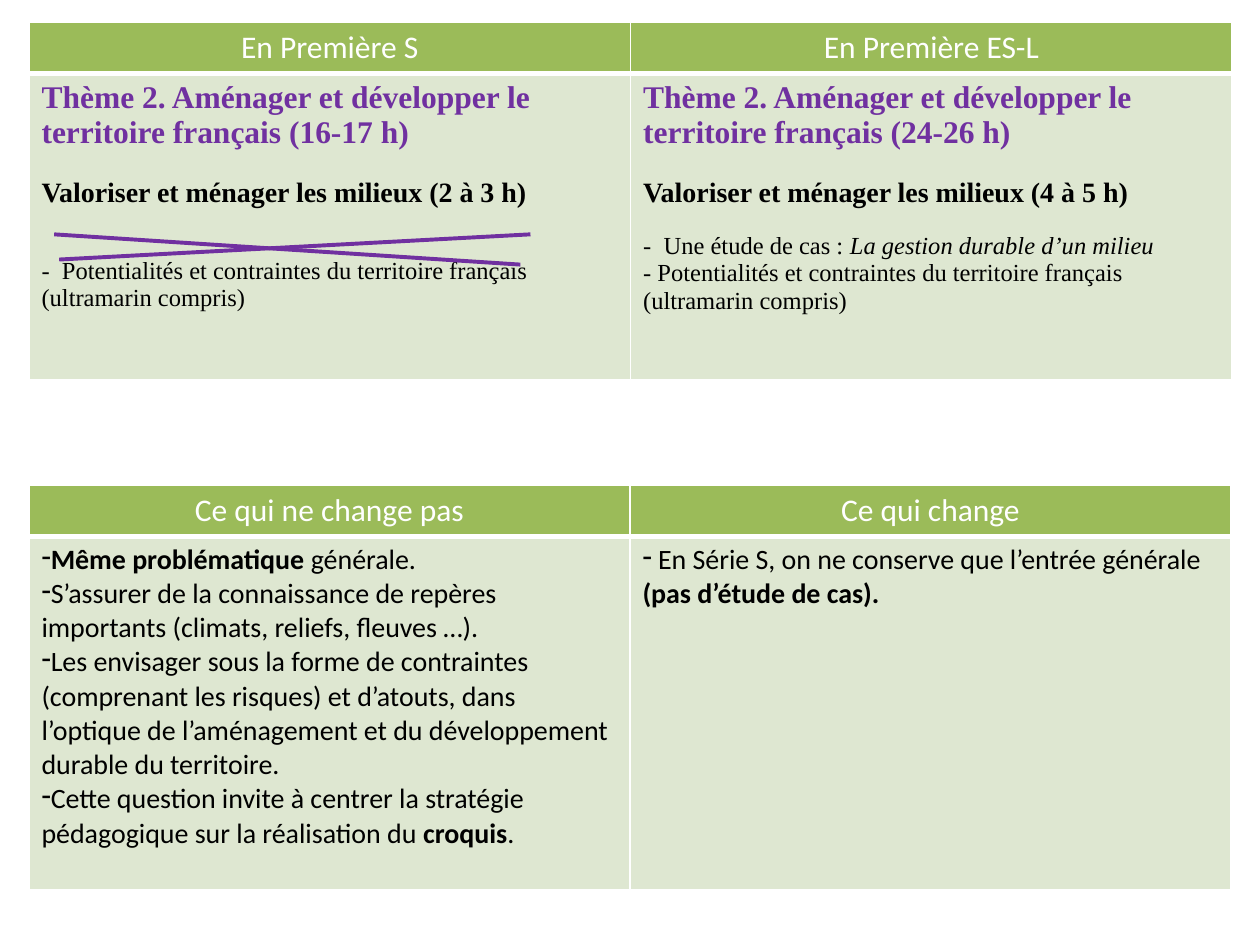
from pptx import Presentation
from pptx.dml.color import RGBColor
from pptx.enum.shapes import MSO_CONNECTOR
from pptx.enum.text import PP_ALIGN as Align
from pptx.oxml.ns import qn
from pptx.util import Inches, Pt
from lxml.etree import SubElement, Element

COLORS = {"header": "9BBB59", "body": "DEE7D1", "white": "FFFFFF",
          "purple": "7030A0", "black": "000000"}
SERIF = "Times New Roman"
SANS = "Calibri"


def span(text, size=16, bold=False, italic=False, color="black", font=SANS):
    return text, size, bold, italic, color, font


def line(*spans, before=0, bullet=False, indent=0):
    return spans, before, bullet, indent


def theme(text):
    return line(span(text, 18, True, color="purple", font=SERIF))


def heading(text):
    return line(span(text, 16, True, font=SERIF), before=16)


def detail(*texts, before=0):
    return line(*(span(text, 14, italic=italic, font=SERIF)
                  for text, italic in texts), before=before)


def dashed(*texts, indent=0):
    return line(*(span(text, bold=bold) for text, bold in texts),
                bullet=True, indent=indent)


class SlideBuilder:
    def __init__(self, page):
        self.page = page

    def color(self, name):
        return RGBColor.from_string(COLORS[name])

    def table(self, left, top, width, heights, titles, bodies):
        frame = self.page.shapes.add_table(
            2, len(titles), Inches(left), Inches(top),
            Inches(width), Inches(sum(heights)))
        table = frame.table
        for row, height in zip(table.rows, heights):
            row.height = Inches(height)
        for column in table.columns:
            column.width = Inches(width / len(titles))
        for index, (title, body) in enumerate(zip(titles, bodies)):
            title_line = line(span(title, 18, color="white"))
            self.cell(table.cell(0, index), [title_line], "header", 3, Align.CENTER)
            self.cell(table.cell(1, index), body, "body", 1, Align.LEFT)

    def cell(self, cell, lines, fill, bottom, align):
        cell.fill.solid()
        cell.fill.fore_color.rgb = self.color(fill)
        self.borders(cell, bottom)
        for index, (spans, before, bullet, indent) in enumerate(lines):
            frame = cell.text_frame
            para = frame.add_paragraph() if index else frame.paragraphs[0]
            para.alignment = align
            para.space_before = Pt(before)
            if bullet:
                self.bullet(para, indent)
            for text, size, bold, italic, color, font in spans:
                run = para.add_run()
                run.text = text
                run.font.size = Pt(size)
                run.font.bold = bold
                run.font.italic = italic
                run.font.name = font
                run.font.color.rgb = self.color(color)

    def borders(self, cell, bottom):
        properties = cell._tc.get_or_add_tcPr()
        for index, side in enumerate("LRTB"):
            width = Pt(bottom if side == "B" else 1)
            border = Element(qn(f"a:ln{side}"), w=str(width))
            fill = SubElement(border, qn("a:solidFill"))
            SubElement(fill, qn("a:srgbClr"), val=COLORS["white"])
            properties.insert(index, border)

    def bullet(self, para, indent):
        properties = para._p.get_or_add_pPr()
        properties.set("marL", "0")
        properties.set("indent", str(Inches(indent)))
        SubElement(properties, qn("a:buChar"), char="-")

    def stroke(self, start, end):
        connector = self.page.shapes.add_connector(
            MSO_CONNECTOR.STRAIGHT, *map(Inches, start + end))
        connector.line.color.rgb = self.color("purple")
        connector.line.width = Pt(2.25)
        SubElement(connector._element.spPr, qn("a:effectLst"))


def main():
    deck = Presentation()
    deck.slide_width = Inches(10)
    deck.slide_height = Inches(7.5)
    builder = SlideBuilder(deck.slides.add_slide(deck.slide_layouts[6]))

    potential = "Potentialités et contraintes du territoire français (ultramarin compris)"
    science = [
        theme("Thème 2. Aménager et développer le territoire français (16-17 h)"),
        heading("Valoriser et ménager les milieux (2 à 3 h)"),
        detail(("-  " + potential, False), before=27.6),
    ]
    humanities = [
        theme("Thème 2. Aménager et développer le territoire français (24-26 h)"),
        heading("Valoriser et ménager les milieux (4 à 5 h)"),
        detail(("-  Une étude de cas : ", False),
               ("La gestion durable d’un milieu", True), before=13.8),
        detail(("- " + potential, False)),
    ]
    builder.table(0.23, 0.18, 9.55, (0.4, 2.43),
                  ("En Première S", "En Première ES-L"), (science, humanities))

    hanging = -0.31
    unchanged = [
        dashed(("Même problématique ", True), ("générale.", False), indent=hanging),
        dashed(("S’assurer de la connaissance de repères importants "
                "(climats, reliefs, fleuves …).", False), indent=hanging),
        dashed(("Les envisager sous la forme de contraintes (comprenant les risques) "
                "et d’atouts, dans l’optique de l’aménagement et du développement "
                "durable du territoire.", False), indent=hanging),
        dashed(("Cette question invite à centrer la stratégie pédagogique "
                "sur la réalisation du ", False),
               ("croquis", True), (".", False), indent=hanging),
    ]
    changed = [dashed((" En Série S, on ne conserve que l’entrée générale ", False),
                      ("(pas d’étude de cas).", True))]
    builder.table(0.23, 3.85, 9.54, (0.4, 2.81),
                  ("Ce qui ne change pas", "Ce qui change"), (unchanged, changed))

    builder.stroke((0.43, 1.86), (4.13, 2.1))
    builder.stroke((0.47, 2.06), (4.21, 1.86))
    deck.save("out.pptx")


if __name__ == "__main__":
    main()
